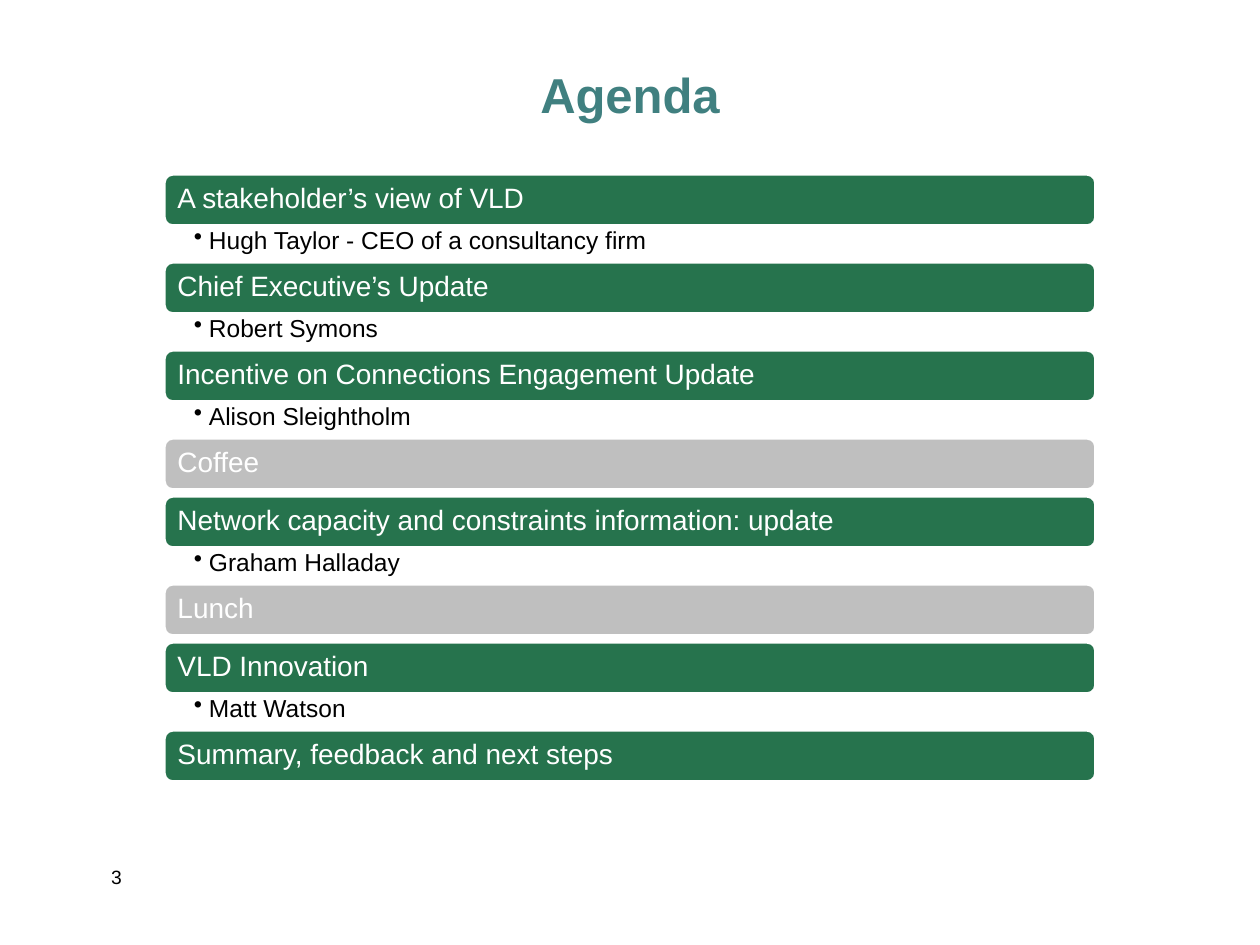
from lxml.etree import SubElement
from pptx import Presentation
from pptx.dml.color import RGBColor
from pptx.enum.shapes import MSO_SHAPE as Shape
from pptx.enum.text import MSO_ANCHOR as Anchor, PP_ALIGN as Align
from pptx.oxml.ns import qn
from pptx.util import Pt

AGENDA = [
    ("A stakeholder’s view of VLD", "Hugh Taylor - CEO of a consultancy firm"),
    ("Chief Executive’s Update", "Robert Symons"),
    ("Incentive on Connections Engagement Update", "Alison Sleightholm"),
    ("Coffee", None),
    ("Network capacity and constraints information: update", "Graham Halladay"),
    ("Lunch", None),
    ("VLD Innovation", "Matt Watson"),
    ("Summary, feedback and next steps", None),
]
BREAKS = {"Coffee", "Lunch"}

TEAL = RGBColor(0x40, 0x80, 0x80)
GREEN = RGBColor(0x26, 0x73, 0x4D)
GREY = RGBColor(0xBF, 0xBF, 0xBF)
WHITE = RGBColor(0xFF, 0xFF, 0xFF)
BLACK = RGBColor(0, 0, 0)

PX = 914400 // 126
LEFT, TOP, WIDTH = 164, 174, 932
BAR_HEIGHT, SPEAKER_HEIGHT, GAP = 52, 36, 6


def px(*lengths):
    return [length * PX for length in lengths]


def write(shape, text, size, color, insets, anchor=Anchor.TOP, align=Align.LEFT, bold=False,
          bullet=False, spacing=None):
    frame = shape.text_frame
    frame.word_wrap = True
    frame.vertical_anchor = anchor
    (frame.margin_left, frame.margin_top,
     frame.margin_right, frame.margin_bottom) = px(*insets)
    para = frame.paragraphs[0]
    para.text = text
    para.alignment = align
    if spacing:
        para.line_spacing = spacing
    if bullet:
        props = para._p.get_or_add_pPr()
        props.set("marL", str(15 * PX))
        props.set("indent", str(-15 * PX))
        SubElement(props, qn("a:buChar")).set("char", "•")
    font = para.font
    font.name, font.size, font.bold = "Arial", Pt(size), bold
    font.color.rgb = color


def add_text(page, box, *args, **style):
    write(page.shapes.add_textbox(*px(*box)), *args, **style)


def add_bar(page, top, topic):
    bar = page.shapes.add_shape(Shape.ROUNDED_RECTANGLE, *px(LEFT, top, WIDTH, BAR_HEIGHT))
    bar.shadow.inherit = False
    bar.fill.solid()
    bar.fill.fore_color.rgb = GREY if topic in BREAKS else GREEN
    bar.line.color.rgb = WHITE
    bar.line.width = Pt(2)
    write(bar, topic, 16, WHITE, (11, 11, 11, 11), anchor=Anchor.MIDDLE, spacing=0.9)


def main():
    deck = Presentation()
    deck.slide_width, deck.slide_height = px(1260, 945)
    page = deck.slides.add_slide(deck.slide_layouts[6])
    add_text(page, (94, 45, 1072, 97), "Agenda", 28, TEAL, (13, 6, 13, 6),
             anchor=Anchor.MIDDLE, align=Align.CENTER, bold=True)
    top = TOP
    for topic, speaker in AGENDA:
        add_bar(page, top, topic)
        top += BAR_HEIGHT
        if speaker:
            add_text(page, (LEFT, top, WIDTH, SPEAKER_HEIGHT), speaker, 14, BLACK,
                     (30, 2, 14, 2), bullet=True, spacing=0.9)
        top += SPEAKER_HEIGHT if speaker else GAP
    add_text(page, (98, 859, 262, 63), "3", 11, BLACK, (13, 6, 13, 6))
    deck.save("out.pptx")


if __name__ == "__main__":
    main()
